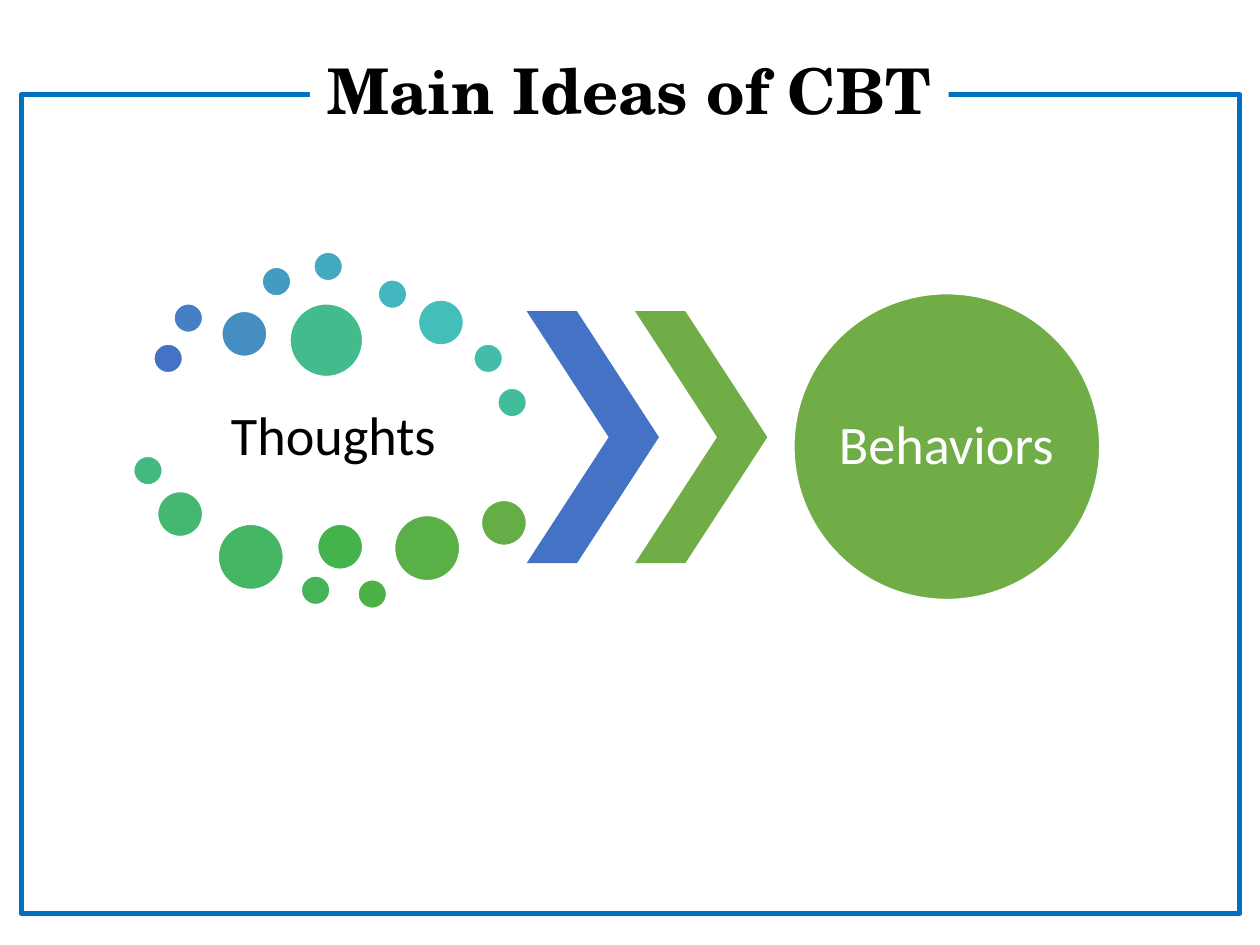
import pptx
import pptx.util
import pptx.dml.color
import pptx.enum.shapes
import pptx.enum.text

RGB = pptx.dml.color.RGBColor
SHAPE = pptx.enum.shapes.MSO_SHAPE
WHITE = RGB(0xFF, 0xFF, 0xFF)
BLACK = RGB(0x00, 0x00, 0x00)
FRAME_BLUE = RGB(0x00, 0x70, 0xC0)
BLUE = RGB(0x44, 0x72, 0xC4)
GREEN = RGB(0x70, 0xAD, 0x47)

prs = pptx.Presentation()
prs.slide_width = pptx.util.Inches(10)
prs.slide_height = pptx.util.Inches(7.5)
s = prs.slides.add_slide(prs.slide_layouts[6])

# Grid of 1000 columns by 750 rows
COL = prs.slide_width // 1000
ROW = prs.slide_height // 750


def add_shape(kind, x, y, w, h, fill=None, line=None, line_width=1):
    sp = s.shapes.add_shape(kind, x * COL, y * ROW, w * COL, h * ROW)
    sp.shadow.inherit = False
    if fill is None:
        sp.fill.background()
    else:
        sp.fill.solid()
        sp.fill.fore_color.rgb = fill
    if line is None:
        sp.line.fill.background()
    else:
        sp.line.color.rgb = line
        sp.line.width = pptx.util.Pt(line_width)
    return sp


def add_text(text, x, y, w, h, size, font, color, bold=False):
    sp = s.shapes.add_textbox(x * COL, y * ROW, w * COL, h * ROW)
    tf = sp.text_frame
    tf.word_wrap = True
    tf.vertical_anchor = pptx.enum.text.MSO_ANCHOR.MIDDLE
    tf.margin_left = tf.margin_right = tf.margin_top = tf.margin_bottom = 0
    tf.text = text
    p = tf.paragraphs[0]
    p.alignment = pptx.enum.text.PP_ALIGN.CENTER
    p.line_spacing = 0.9
    r = p.runs[0]
    r.font.size = pptx.util.Pt(size)
    r.font.name = font
    r.font.bold = bold
    r.font.color.rgb = color
    return sp


# Frame, with the title set into its top edge
add_shape(SHAPE.RECTANGLE, 17, 75, 967, 650, line=FRAME_BLUE, line_width=3)
title = add_text("Main Ideas of CBT", 246, 50, 507, 50, 36, "TeX Gyre Schola", BLACK, True)
title.fill.solid()
title.fill.fore_color.rgb = WHITE

# Thoughts, ringed by dots: column, row, diameter, colour
add_text("Thoughts", 122, 301, 285, 94, 31, "Calibri", BLACK)
SMALL, MEDIUM, LARGE, LARGEST = 23, 36, 52, 58
dots = [
    (122, 273, SMALL, BLUE),
    (138, 241, SMALL, RGB(0x44, 0x80, 0xC3)),
    (176, 247, MEDIUM, RGB(0x44, 0x8E, 0xC2)),
    (208, 212, SMALL, RGB(0x44, 0x9B, 0xC1)),
    (249, 200, SMALL, RGB(0x43, 0xA9, 0xC0)),
    (300, 222, SMALL, RGB(0x43, 0xB6, 0xBF)),
    (332, 238, MEDIUM, RGB(0x43, 0xBE, 0xB9)),
    (376, 273, SMALL, RGB(0x43, 0xBD, 0xAA)),
    (395, 308, SMALL, RGB(0x43, 0xBC, 0x9C)),
    (230, 241, LARGEST, RGB(0x43, 0xBB, 0x8D)),
    (106, 362, SMALL, RGB(0x44, 0xB9, 0x7F)),
    (125, 390, MEDIUM, RGB(0x44, 0xB8, 0x71)),
    (173, 416, LARGE, RGB(0x45, 0xB6, 0x64)),
    (239, 457, SMALL, RGB(0x45, 0xB4, 0x57)),
    (252, 416, MEDIUM, RGB(0x45, 0xB3, 0x4B)),
    (284, 460, SMALL, RGB(0x4C, 0xB1, 0x46)),
    (313, 409, LARGE, RGB(0x59, 0xB0, 0x46)),
    (382, 397, MEDIUM, RGB(0x65, 0xAE, 0x47)),
]
for x, y, size, color in dots:
    add_shape(SHAPE.OVAL, x, y, size, size, color, WHITE)

# Chevrons leading from thoughts to behaviors
for i, color in enumerate((BLUE, GREEN)):
    chevron = add_shape(SHAPE.CHEVRON, 418 + 86 * i, 247, 105, 200, color)
    chevron.adjustments[0] = 0.62

# Behaviors
add_shape(SHAPE.OVAL, 630, 233, 243, 243, GREEN, WHITE)
add_text("Behaviors", 665, 269, 172, 172, 31, "Calibri", WHITE)

prs.save("out.pptx")
